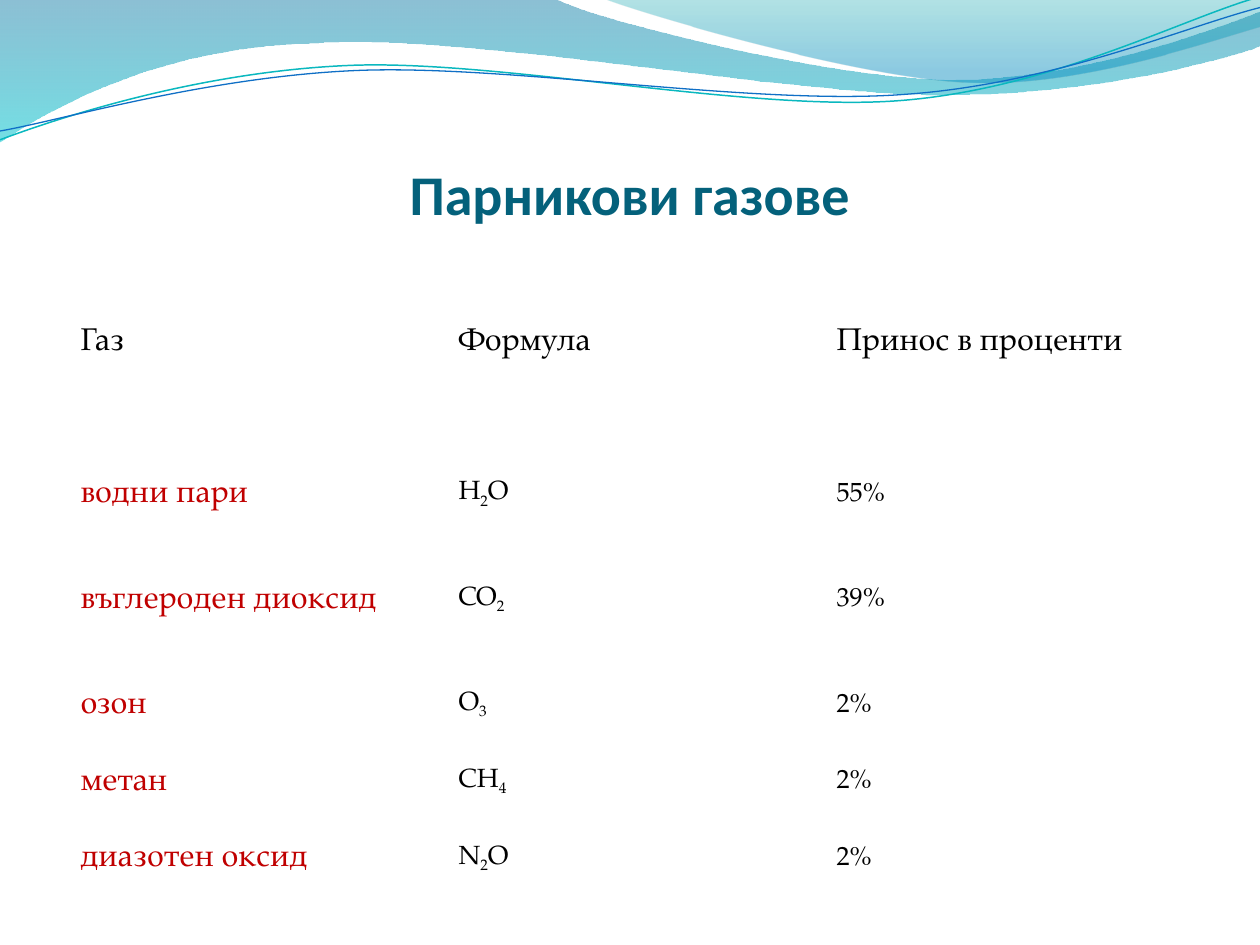
from itertools import groupby

from lxml.etree import SubElement
from pptx import Presentation
from pptx.dml.color import RGBColor as Rgb
from pptx.enum.text import MSO_ANCHOR as Anchor, PP_ALIGN as Align
from pptx.oxml.ns import qn
from pptx.util import Inches, Pt

COLORS = {"title": "04617B", "text": "000000", "gas": "C00000",
          "teal_line": "0AB8BF", "blue_line": "0F6FC6",
          "deep": "0074A1", "aqua": "00C6CF", "sea": "00A1A9", "sky": "008BBF"}
BODY_FONT = "TeX Gyre Pagella"
MARGIN, COLUMN = 0.5, 3


def add_outline(start, segments, closed):
    """Draw segments of one point (straight) or three points (cubic curve)."""
    points = [(Inches(x), Inches(y)) for segment in segments for x, y in segment]
    builder = page.shapes.build_freeform(Inches(start[0]), Inches(start[1]))
    builder.add_line_segments(points, close=closed)
    outline = builder.convert_to_shape()
    outline.shadow.inherit = False
    straight = iter(list(outline._element.spPr.iter(qn("a:lnTo"))))
    for segment in segments:
        first, *others = [next(straight) for _ in segment]
        if others:
            first.tag = qn("a:cubicBezTo")
            for other in others:
                first.append(other[0])
                other.getparent().remove(other)
    return outline


def style(span, font, size, color):
    span.font.name, span.font.size = font, Pt(size)
    span.font.color.rgb = Rgb.from_string(COLORS[color])


deck = Presentation()
deck.slide_width, deck.slide_height = Inches(10), Inches(7.5)
page = deck.slides.add_slide(deck.slide_layouts[6])

# Translucent waves: start, segments, gradient stops (position, colour, opacity %)
waves = [
    ((0, 0),
     [[(4.4, -0.01)],
      [(4.76, 0.17), (6.64, 0.63), (7.58, 0.63)],
      [(8.53, 0.63), (9.58, 0.26), (10, 0.09)],
      [(10.01, 0.36)],
      [(9.83, 0.44), (8.7, 0.76), (7.46, 0.75)],
      [(6.22, 0.75), (3.82, 0.28), (2.57, 0.34)],
      [(1.29, 0.36), (0.46, 0.83), (-0.01, 1.13)]],
     [(0, "deep", 45), (1, "aqua", 55)]),
    ((4.79, -0.01),
     [[(5.09, 0.11), (6.82, 0.62), (7.69, 0.65)],
      [(8.56, 0.69), (9.61, 0.32), (10, 0.21)],
      [(10, 0)]],
     [(0, "sea", 30), (0.8, "sky", 45)]),
]
for start, segments, stops in waves:
    wave = add_outline(start, segments, closed=True)
    wave.line.fill.background()
    wave.fill.gradient()
    wave.fill.gradient_angle = 270
    for stop, (position, color, _) in zip(wave.fill.gradient_stops, stops):
        stop.position = position
        stop.color.rgb = Rgb.from_string(COLORS[color])
    for tint, (_, _, opacity) in zip(wave._element.spPr.iter(qn("a:srgbClr")), stops):
        SubElement(tint, qn("a:alpha")).set("val", str(opacity * 1000))

# Thin lines following the waves
lines = [
    ((0, 1.11),
     [[(0.48, 0.93), (1.58, 0.57), (2.77, 0.52)],
      [(3.95, 0.47), (5.93, 0.89), (7.13, 0.8)],
      [(8.33, 0.71), (9.38, 0.15), (9.98, -0.02)]], "teal_line", 0.85),
    ((0, 1.04),
     [[(0.47, 0.96), (1.64, 0.61), (2.83, 0.56)],
      [(4.03, 0.51), (5.97, 0.84), (7.17, 0.75)],
      [(8.36, 0.67), (9.41, 0.21), (10, 0.06)]], "blue_line", 0.75),
]
for start, segments, color, width in lines:
    line = add_outline(start, segments, closed=False)
    line.fill.background()
    line.line.color.rgb = Rgb.from_string(COLORS[color])
    line.line.width = Pt(width)

# Title
title = page.shapes.add_textbox(Inches(MARGIN), Inches(0.77), Inches(3 * COLUMN), Inches(1.03))
frame = title.text_frame
frame.word_wrap = True
frame.vertical_anchor = Anchor.BOTTOM
frame.margin_left = frame.margin_right = frame.margin_bottom = 0
frame.text = "Парникови газове"
para = frame.paragraphs[0]
para.alignment = Align.CENTER
style(para.runs[0], "Calibri", 32, "title")
para.runs[0].font.bold = True

# Table of gases; each heading ends with a line break
rows = [
    ("Газ\v", "Формула\v", "Принос в проценти\v"),
    ("водни пари", "H2O", "55%"),
    ("въглероден диоксид", "CO2", "39%"),
    ("озон", "O3", "2%"),
    ("метан", "CH4", "2%"),
    ("диазотен оксид", "N2O", "2%"),
]
heights = [1.51, 0.61, 1.06, 0.61, 0.61, 0.61]
table = page.shapes.add_table(len(rows), 3, Inches(MARGIN), Inches(2.12),
                              Inches(3 * COLUMN), Inches(sum(heights))).table
table.first_row = table.horz_banding = False
for column in table.columns:
    column.width = Inches(COLUMN)
for r, (texts, height) in enumerate(zip(rows, heights)):
    table.rows[r].height = Inches(height)
    for c, text in enumerate(texts):
        cell = table.cell(r, c)
        cell.fill.background()
        cell.vertical_anchor = Anchor.MIDDLE
        cell.margin_left = cell.margin_right = Inches(0.14)
        cell.margin_top = cell.margin_bottom = Inches(0.04)
        para = cell.text_frame.paragraphs[0]
        is_formula = r > 0 and c == 1
        if is_formula:
            for _, group in groupby(text, str.isdigit):
                para.add_run().text = "".join(group)
        else:
            para.text = text
        for span in para.runs:
            style(span, BODY_FONT, 15 if r and c else 18, "gas" if r and c == 0 else "text")
            if is_formula and span.text.isdigit():
                span.font._element.set("baseline", "-25000")

deck.save("out.pptx")
